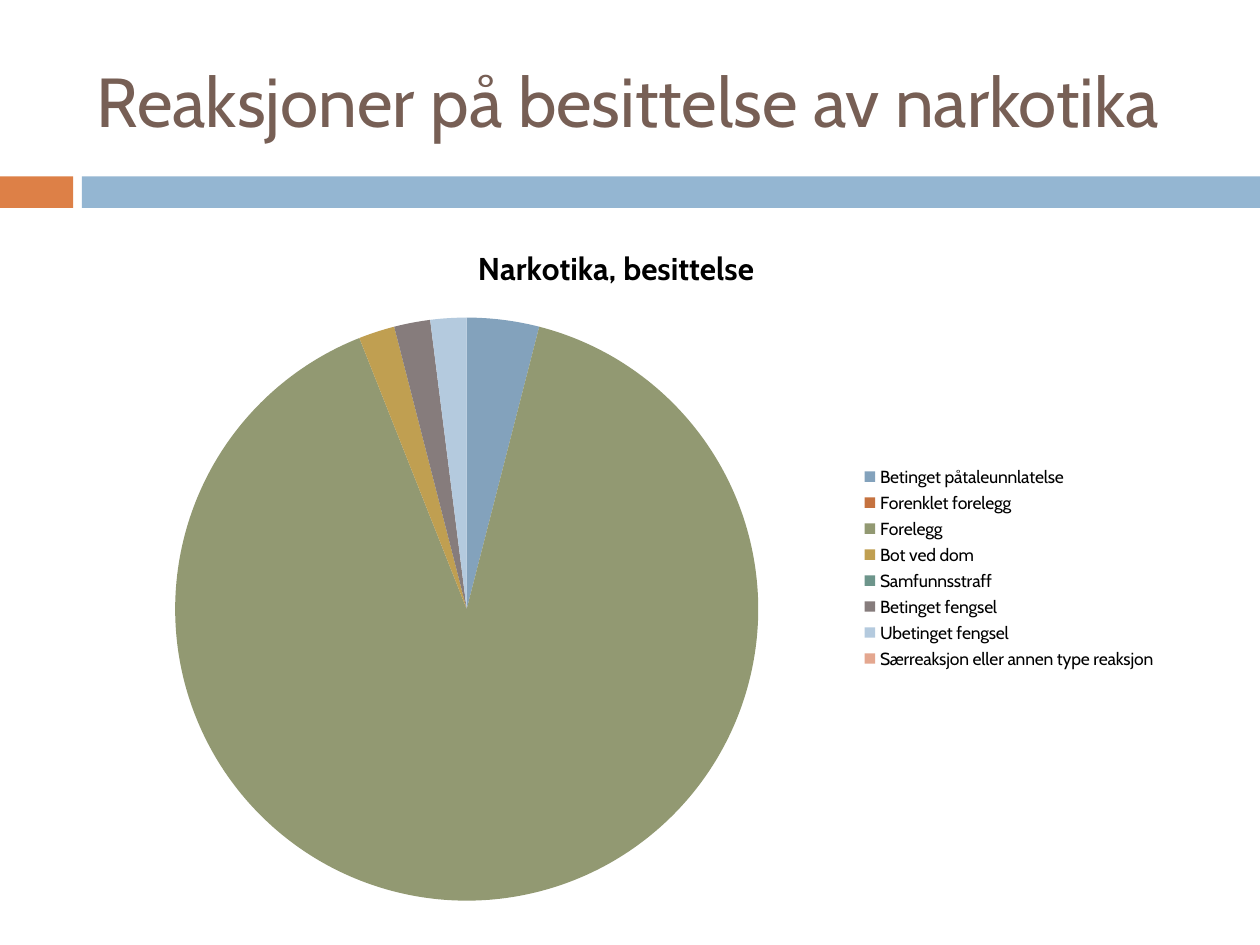
import dataclasses

import lxml.etree
import pptx
import pptx.chart.data
import pptx.dml.color
import pptx.enum.chart
import pptx.enum.shapes
import pptx.enum.text
import pptx.oxml.ns
import pptx.util


@dataclasses.dataclass(frozen=True)
class Theme:
    font: str = "Cabin"
    title_color: str = "775F55"
    accent_color: str = "DD8047"
    band_color: str = "94B6D2"
    chart_text_color: str = "000000"
    title_size: float = 39.6
    chart_title_size: float = 18
    legend_size: float = 10
    slice_colors: tuple = (
        "83A2BC", "C5723F", "929972", "C09F51",
        "6D958B", "867C7C", "B4CADE", "E4A78F",
    )


THEME = Theme()
SLIDE_WIDTH, SLIDE_HEIGHT = 10, 7.5
REACTIONS = {
    "Betinget påtaleunnlatelse": 4,
    "Forenklet forelegg": 0,
    "Forelegg": 90,
    "Bot ved dom": 2,
    "Samfunnsstraff": 0,
    "Betinget fengsel": 2,
    "Ubetinget fengsel": 2,
    "Særreaksjon eller annen type reaksjon": 0,
}


def inches(box):
    return [pptx.util.Inches(length) for length in box]


def set_fill(fill, color):
    fill.solid()
    fill.fore_color.rgb = pptx.dml.color.RGBColor.from_string(color)


def style_font(font, size, color, bold=False):
    font.name = THEME.font
    font.size = pptx.util.Pt(size)
    font.bold = bold
    font.color.rgb = pptx.dml.color.RGBColor.from_string(color)


def add_title(slide, box, text):
    frame = slide.shapes.add_textbox(*inches(box)).text_frame
    frame.word_wrap = True
    frame.vertical_anchor = pptx.enum.text.MSO_ANCHOR.MIDDLE
    frame.text = text
    style_font(frame.paragraphs[0].runs[0].font, THEME.title_size, THEME.title_color)


def add_divider(slide, box, accent_width, gap):
    """Split the box into a short accent block and a long band."""
    left, top, width, height = box
    band_offset = accent_width + gap
    blocks = (
        (left, accent_width, THEME.accent_color),
        (left + band_offset, width - band_offset, THEME.band_color),
    )
    for block_left, block_width, color in blocks:
        block = slide.shapes.add_shape(
            pptx.enum.shapes.MSO_SHAPE.RECTANGLE,
            *inches((block_left, top, block_width, height)),
        )
        block.shadow.inherit = False
        set_fill(block.fill, color)
        block.line.fill.background()


def place_plot(chart, **shares):
    """Fix the inner plot area, given as shares of the chart's size."""
    plot_area = chart.plots[0]._element.getparent()
    qualified = pptx.oxml.ns.qn
    for layout in plot_area.findall(qualified("c:layout")):
        plot_area.remove(layout)
    layout = lxml.etree.Element(qualified("c:layout"))
    plot_area.insert(0, layout)
    manual = lxml.etree.SubElement(layout, qualified("c:manualLayout"))
    settings = {"layoutTarget": "inner", "xMode": "edge", "yMode": "edge", **shares}
    for name, value in settings.items():
        lxml.etree.SubElement(manual, qualified(f"c:{name}")).set("val", str(value))


def add_reaction_chart(slide, box, title, values):
    data = pptx.chart.data.CategoryChartData()
    data.categories = list(values)
    data.add_series(title, list(values.values()))
    chart = slide.shapes.add_chart(
        pptx.enum.chart.XL_CHART_TYPE.PIE, *inches(box), data
    ).chart
    style_font(chart.font, THEME.legend_size, THEME.chart_text_color)

    chart.has_title = True
    chart.chart_title.include_in_layout = False
    title_frame = chart.chart_title.text_frame
    title_frame.text = title
    style_font(
        title_frame.paragraphs[0].runs[0].font,
        THEME.chart_title_size, THEME.chart_text_color, bold=True,
    )

    chart.has_legend = True
    chart.legend.position = pptx.enum.chart.XL_LEGEND_POSITION.RIGHT
    chart.legend.include_in_layout = False
    style_font(chart.legend.font, THEME.legend_size, THEME.chart_text_color)

    plot = chart.plots[0]
    plot.vary_by_categories = True
    for index, color in enumerate(THEME.slice_colors):
        slice_format = plot.series[0].points[index].format
        set_fill(slice_format.fill, color)
        slice_format.line.fill.background()
    place_plot(chart, x=0.1, y=0.14, w=0.53, h=0.84)


def main():
    presentation = pptx.Presentation()
    presentation.slide_width = pptx.util.Inches(SLIDE_WIDTH)
    presentation.slide_height = pptx.util.Inches(SLIDE_HEIGHT)
    slide = presentation.slides.add_slide(presentation.slide_layouts[6])
    set_fill(slide.background.fill, "FFFFFF")

    add_divider(slide, (0, 1.4, SLIDE_WIDTH, 0.25), accent_width=0.58, gap=0.07)
    add_title(slide, (0.67, 0.25, 8.92, 1.08), "Reaksjoner på besittelse av narkotika")
    add_reaction_chart(
        slide, (0.5, 1.75, 8.78, 5.51), "Narkotika, besittelse", REACTIONS
    )
    presentation.save("out.pptx")


if __name__ == "__main__":
    main()
